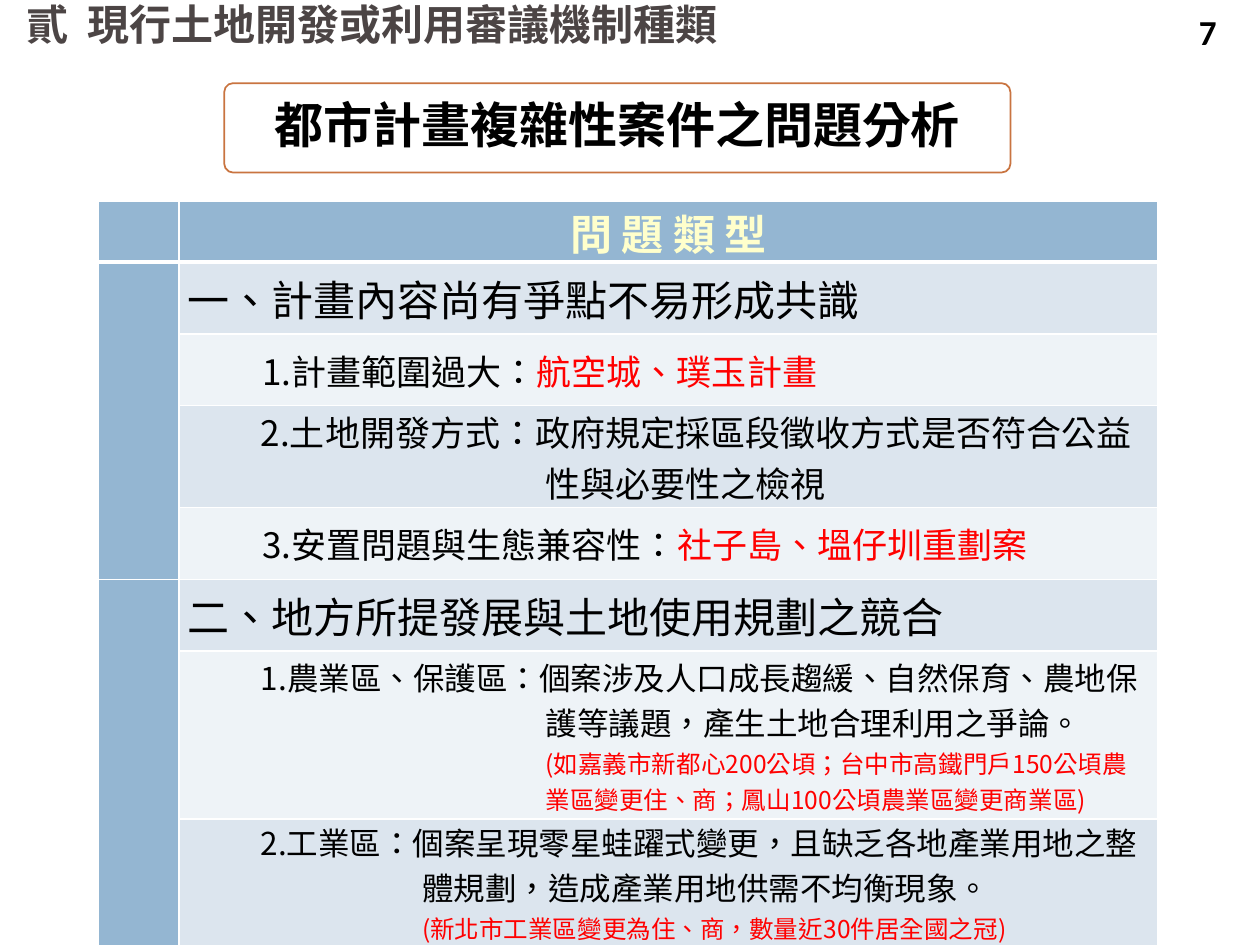
from lxml import etree
from pptx import Presentation
from pptx.dml.color import RGBColor
from pptx.enum.lang import MSO_LANGUAGE_ID as LANGUAGE
from pptx.enum.shapes import MSO_CONNECTOR, MSO_SHAPE
from pptx.enum.text import MSO_ANCHOR, PP_ALIGN
from pptx.oxml.ns import qn
from pptx.util import Inches, Pt

BLACK = RGBColor(0x00, 0x00, 0x00)
WHITE = RGBColor(0xFF, 0xFF, 0xFF)
RED = RGBColor(0xFF, 0x00, 0x00)
GRAY = RGBColor(0x4C, 0x45, 0x45)
ORANGE = RGBColor(0xC9, 0x74, 0x40)
CREAM = RGBColor(0xFF, 0xFF, 0xCC)
BLUE = RGBColor(0x94, 0xB6, 0xD2)
BAND_DARK = RGBColor(0xDC, 0xE5, 0xEE)
BAND_LIGHT = RGBColor(0xEE, 0xF3, 0xF7)
CJK_FONT = "Noto Sans CJK SC"

COLUMN_WIDTHS = (0.64, 7.77)
ROW_HEIGHTS = (0.48, 0.57, 0.57, 0.81, 0.57, 0.57, 1.33, 1.02)
ROW_GROUPS = ((1, 4), (5, 7))

# Each row holds paragraphs: (left margin, first-line indent, size, runs)
ISSUES = (
    [(0, 0, 24, [("一、計畫內容尚有爭點不易形成共識", BLACK)])],
    [(0.59, 0, 20, [("1.計畫範圍過大：", BLACK), ("航空城、璞玉計畫", RED)])],
    [(2.84, -2.26, 20, [("2.土地開發方式：政府規定採區段徵收方式是否符合公益性與必要性之檢視", BLACK)])],
    [(0.59, 0, 20, [("3.安置問題與生態兼容性：", BLACK), ("社子島、塭仔圳重劃案", RED)])],
    [(0, 0, 24, [("二、地方所提發展與土地使用規劃之競合", BLACK)])],
    [
        (2.84, -2.26, 18, [("1.農業區、保護區：個案涉及人口成長趨緩、自然保育、農地保護等議題，產生土地合理利用之爭論。", BLACK)]),
        (2.84, 0, 14, [("(如嘉義市新都心200公頃；台中市高鐵門戶150公頃農業區變更住、商；鳳山100公頃農業區變更商業區)", RED)]),
    ],
    [
        (1.86, -1.28, 18, [("2.工業區：個案呈現零星蛙躍式變更，且缺乏各地產業用地之整體規劃，造成產業用地供需不均衡現象。", BLACK)]),
        (1.86, 0, 14, [("(新北市工業區變更為住、商，數量近30件居全國之冠)", RED)]),
    ],
)


def add_run(paragraph, text, size, color, bold=False, font_name=CJK_FONT):
    run = paragraph.add_run()
    run.text = text
    font = run.font
    font.name, font.size, font.bold = font_name, Pt(size), bold
    font.color.rgb = color
    font.language_id = LANGUAGE.TRADITIONAL_CHINESE
    east_asian = etree.SubElement(run._r.get_or_add_rPr(), qn("a:ea"))
    east_asian.set("typeface", font_name)


def add_text(shapes, box, text, size, color, align=PP_ALIGN.LEFT, spacing=0.9, font_name=CJK_FONT):
    frame = shapes.add_textbox(*map(Inches, box)).text_frame
    frame.word_wrap = True
    frame.vertical_anchor = MSO_ANCHOR.MIDDLE
    paragraph = frame.paragraphs[0]
    paragraph.alignment = align
    paragraph.line_spacing = spacing
    add_run(paragraph, text, size, color, True, font_name)
    return frame


def add_header(slide, left, top, width, height):
    number_width = 0.49
    divider_left = Inches(left + number_width + 0.03)
    divider = slide.shapes.add_connector(
        MSO_CONNECTOR.STRAIGHT, divider_left, Inches(top + 0.07), divider_left, Inches(top + 0.44))
    divider.line.color.rgb = WHITE
    divider.line.width = Pt(1.5)
    etree.SubElement(divider._element.spPr, qn("a:effectLst"))
    add_text(slide.shapes, (left + number_width, top, width - number_width, height),
             "現行土地開發或利用審議機制種類", 24, GRAY)
    add_text(slide.shapes, (left, top, number_width, height), "貳", 24, GRAY)


def add_title(slide, left, top, width, height):
    group = slide.shapes.add_group_shape()
    frame_shape = group.shapes.add_shape(
        MSO_SHAPE.ROUNDED_RECTANGLE, *map(Inches, (left, top, width, height)))
    frame_shape.adjustments[0] = 0.1
    frame_shape.shadow.inherit = False
    frame_shape.fill.solid()
    frame_shape.fill.fore_color.rgb = WHITE
    frame_shape.line.color.rgb = ORANGE
    frame_shape.line.width = Pt(1)
    inset = 0.02
    frame = add_text(group.shapes, (left + inset, top + inset, width - 2 * inset, height - 2 * inset),
                     "都市計畫複雜性案件之問題分析", 28, BLACK, PP_ALIGN.CENTER)
    frame.margin_left = frame.margin_right = Inches(0.07)
    frame.margin_top = frame.margin_bottom = Inches(0.04)


def style_cell(cell, color, bottom_width=1):
    properties = cell._tc.get_or_add_tcPr()
    for side, width in (("L", 1), ("R", 1), ("T", 1), ("B", bottom_width)):
        border = etree.SubElement(properties, qn(f"a:ln{side}"), w=str(Pt(width)))
        fill = etree.SubElement(border, qn("a:solidFill"))
        etree.SubElement(fill, qn("a:srgbClr"), val=str(WHITE))
    cell.fill.solid()
    cell.fill.fore_color.rgb = color
    cell.margin_left = cell.margin_right = Inches(0.07)
    cell.margin_top = cell.margin_bottom = 0


def fill_cell(cell, paragraphs):
    for index, (margin, indent, size, runs) in enumerate(paragraphs):
        frame = cell.text_frame
        paragraph = frame.add_paragraph() if index else frame.paragraphs[0]
        properties = paragraph._p.get_or_add_pPr()
        properties.set("marL", str(Inches(margin)))
        properties.set("indent", str(Inches(indent)))
        for text, color in runs:
            add_run(paragraph, text, size, color)


def add_issue_table(slide, left, top, width, height):
    table = slide.shapes.add_table(len(ROW_HEIGHTS), len(COLUMN_WIDTHS),
                                   *map(Inches, (left, top, width, height))).table
    for column, column_width in zip(table.columns, COLUMN_WIDTHS):
        column.width = Inches(column_width)
    for row, row_height in zip(table.rows, ROW_HEIGHTS):
        row.height = Inches(row_height)

    for column in range(len(COLUMN_WIDTHS)):
        style_cell(table.cell(0, column), BLUE, 3)
    heading = table.cell(0, 1).text_frame.paragraphs[0]
    heading.alignment = PP_ALIGN.CENTER
    add_run(heading, "問 題 類 型", 24, CREAM, True)

    for row, paragraphs in enumerate(ISSUES, 1):
        style_cell(table.cell(row, 0), BLUE)
        cell = table.cell(row, 1)
        style_cell(cell, BAND_DARK if row % 2 else BAND_LIGHT)
        cell.vertical_anchor = MSO_ANCHOR.TOP if row == len(ISSUES) else MSO_ANCHOR.MIDDLE
        fill_cell(cell, paragraphs)
    for first, last in ROW_GROUPS:
        table.cell(first, 0).merge(table.cell(last, 0))


def main():
    presentation = Presentation()
    presentation.slide_width = Inches(10)
    presentation.slide_height = Inches(7.5)
    slide = presentation.slides.add_slide(presentation.slide_layouts[6])
    add_text(slide.shapes, (9.2, 0.08, 0.77, 0.34), "7", 20, BLACK, PP_ALIGN.CENTER, 1, "Calibri")
    add_title(slide, 1.78, 0.66, 6.24, 0.71)
    add_issue_table(slide, 0.78, 1.6, sum(COLUMN_WIDTHS), sum(ROW_HEIGHTS))
    add_header(slide, 0.11, -0.01, 8.83, 0.45)
    presentation.save("out.pptx")


if __name__ == "__main__":
    main()
